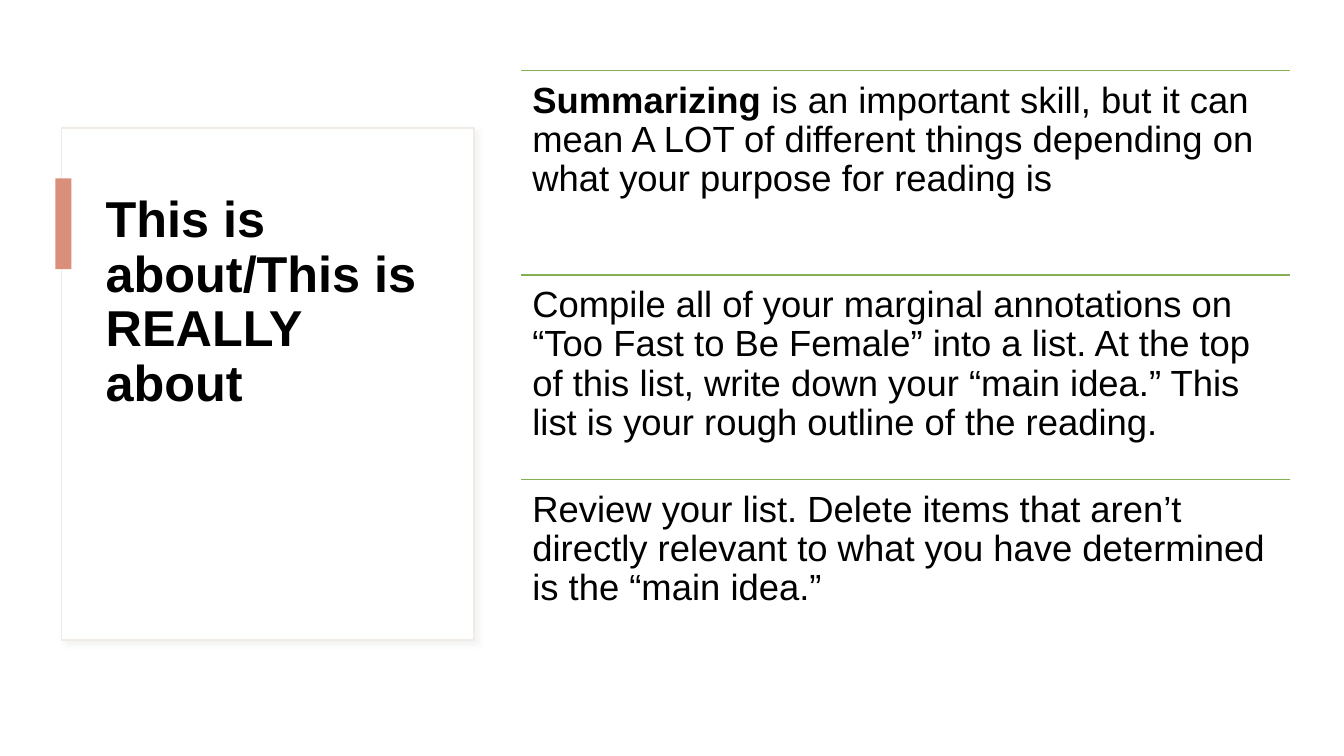
from lxml.etree import SubElement
from pptx import Presentation
from pptx.dml.color import RGBColor
from pptx.enum.shapes import MSO_CONNECTOR, MSO_SHAPE
from pptx.enum.text import MSO_ANCHOR, PP_ALIGN
from pptx.oxml.ns import qn
from pptx.util import Inches, Pt

COLORS = {
    "paper": "FFFFFF",
    "ink": "000000",
    "card_border": "F0ECE5",
    "card_shadow": "D9D9D9",
    "accent": "DA8F7A",
    "rule": "84B053",
}
FONT = "Arial"

# Each step is a list of (text, bold) runs
STEPS = [
    [("Summarizing", True),
     (" is an important skill, but it can mean A LOT of different things "
      "depending on what your purpose for reading is", False)],
    [("Compile all of your marginal annotations on “Too Fast to Be Female” "
      "into a list. At the top of this list, write down your “main idea.” "
      "This list is your rough outline of the reading.", False)],
    [("Review your list. Delete items that aren’t directly relevant to what "
      "you have determined is the “main idea.”", False)],
]


def add_run(paragraph, text, *, size, bold=False, color="ink"):
    run = paragraph.add_run()
    run.text = text
    run.font.name = FONT
    run.font.size = Pt(size)
    run.font.bold = bold
    run.font.color.rgb = RGBColor.from_string(COLORS[color])


class SlideBuilder:
    def __init__(self, slide):
        self.slide = slide

    def background(self, color):
        fill = self.slide.background.fill
        fill.solid()
        fill.fore_color.rgb = RGBColor.from_string(COLORS[color])

    def block(self, left, top, width, height, color, border=None):
        block = self.slide.shapes.add_shape(
            MSO_SHAPE.RECTANGLE, Inches(left), Inches(top), Inches(width), Inches(height))
        block.shadow.inherit = False
        block.fill.solid()
        block.fill.fore_color.rgb = RGBColor.from_string(COLORS[color])
        if border:
            block.line.color.rgb = RGBColor.from_string(COLORS[border])
            block.line.width = Pt(1)
        else:
            block.line.fill.background()
        return block

    def soft_shadow(self, block, color):
        effects = block.element.spPr.find(qn("a:effectLst"))
        shadow = SubElement(effects, qn("a:outerShdw"), blurRad=str(Pt(4)),
                            dist=str(Pt(3)), dir=str(45 * 60000), algn="tl")
        tint = SubElement(shadow, qn("a:srgbClr"), val=COLORS[color])
        SubElement(tint, qn("a:alpha"), val="30000")

    def rule(self, left, top, width, color):
        rule = self.slide.shapes.add_connector(
            MSO_CONNECTOR.STRAIGHT, Inches(left), Inches(top),
            Inches(left + width), Inches(top))
        rule.line.color.rgb = RGBColor.from_string(COLORS[color])
        rule.line.width = Pt(1)
        SubElement(rule.element.spPr, qn("a:effectLst"))

    def text(self, left, top, width, height, runs, size, inset_x=0.1, inset_y=0.05):
        frame = self.slide.shapes.add_textbox(
            Inches(left), Inches(top), Inches(width), Inches(height)).text_frame
        frame.word_wrap = True
        frame.vertical_anchor = MSO_ANCHOR.TOP
        frame.margin_left = frame.margin_right = Inches(inset_x)
        frame.margin_top = frame.margin_bottom = Inches(inset_y)
        paragraph = frame.paragraphs[0]
        paragraph.alignment = PP_ALIGN.LEFT
        paragraph.line_spacing = 0.9
        for text, bold in runs:
            add_run(paragraph, text, size=size, bold=bold)


def main():
    deck = Presentation()
    deck.slide_width, deck.slide_height = Inches(13.33), Inches(7.5)
    builder = SlideBuilder(deck.slides.add_slide(deck.slide_layouts[6]))
    builder.background("paper")

    # Title card with its accent bar
    card = builder.block(0.61, 1.27, 4.09, 5.08, "paper", border="card_border")
    builder.soft_shadow(card, "card_shadow")
    builder.text(0.95, 1.88, 3.39, 3.85,
                 [("This is about/This is REALLY about", True)], size=36)
    builder.block(0.55, 1.77, 0.16, 0.9, "accent")

    # Steps, each below a rule
    left, first_top, width, pitch = 5.17, 0.7, 7.62, 2.03
    for index, runs in enumerate(STEPS):
        top = first_top + index * pitch
        builder.rule(left, top, width, "rule")
        builder.text(left, top, width, pitch, runs, size=26, inset_x=0.11, inset_y=0.11)

    deck.save("out.pptx")


if __name__ == "__main__":
    main()
